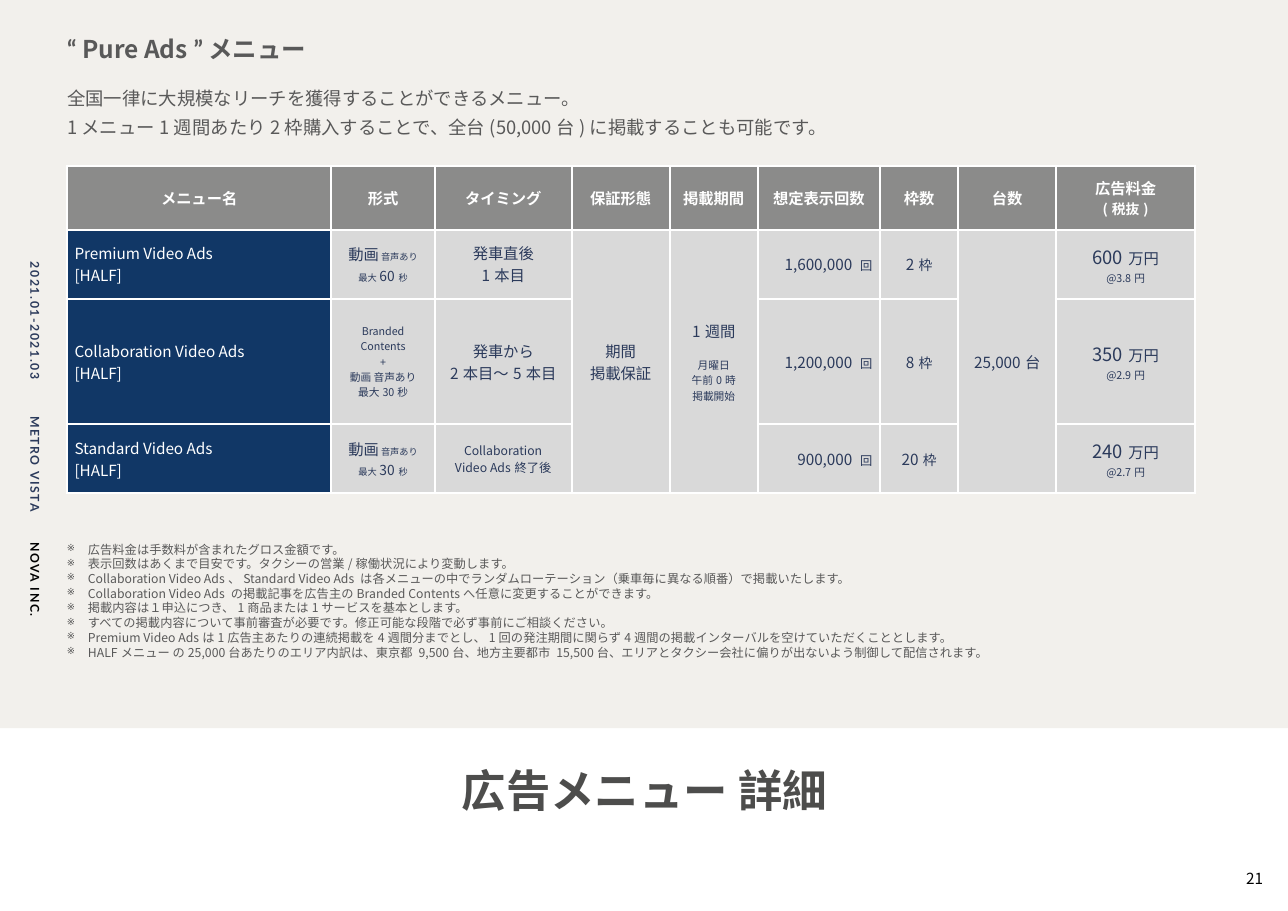
from lxml import etree
from pptx import Presentation
from pptx.dml.color import RGBColor
from pptx.enum.shapes import MSO_SHAPE
from pptx.enum.text import MSO_ANCHOR, PP_ALIGN
from pptx.oxml.ns import qn
from pptx.util import Pt

LEFT, CENTER, RIGHT = PP_ALIGN.LEFT, PP_ALIGN.CENTER, PP_ALIGN.RIGHT
MIDDLE = MSO_ANCHOR.MIDDLE
RECTANGLE = MSO_SHAPE.RECTANGLE

WHITE = RGBColor(0xFF, 0xFF, 0xFF)
BLACK = RGBColor(0, 0, 0)
CREAM = RGBColor(0xF2, 0xF0, 0xEC)
HEADER_GRAY = RGBColor(0x8B, 0x8B, 0x8A)
CELL_GRAY = RGBColor(0xD9, 0xD9, 0xD9)
MENU_BLUE = RGBColor(0x11, 0x37, 0x66)
NAVY = RGBColor(0x2B, 0x3A, 0x5B)
TEXT_GRAY = RGBColor(0x59, 0x59, 0x59)
TITLE_GRAY = RGBColor(0x4D, 0x4D, 0x4C)

JAPANESE_FONT = "Noto Sans CJK JP"
LATIN_FONT = "Lato"
SLIDE_WIDTH, SLIDE_HEIGHT = 841.7, 595.4
LEFT_EDGE = 36.7

COLUMN_WIDTHS = [172.8, 67.7, 89.3, 64.1, 57.6, 79.9, 51.1, 64.1, 90.7]
ROW_HEIGHTS = [41.8, 45.2, 81.8, 45.2]
MENU_COLUMN, PERIOD_COLUMN, VIEWS_COLUMN = 0, 4, 5
MERGED_COLUMNS = [3, 4, 7]

DESCRIPTION = [
    "全国一律に大規模なリーチを獲得することができるメニュー。",
    "1メニュー1週間あたり2枠購入することで、全台(50,000台)に掲載することも可能です。",
]
NOTES = [
    "広告料金は手数料が含まれたグロス金額です。",
    "表示回数はあくまで目安です。タクシーの営業/稼働状況により変動します。",
    "Collaboration Video Ads、Standard Video Ads は各メニューの中でランダムローテーション（乗車毎に異なる順番）で掲載いたします。",
    "Collaboration Video Ads の掲載記事を広告主のBranded Contentsへ任意に変更することができます。",
    "掲載内容は１申込につき、1商品または1サービスを基本とします。",
    "すべての掲載内容について事前審査が必要です。修正可能な段階で必ず事前にご相談ください。",
    "Premium Video Adsは1広告主あたりの連続掲載を4週間分までとし、1回の発注期間に関らず4週間の掲載インターバルを空けていただくこととします。",
    "HALFメニュー の25,000台あたりのエリア内訳は、東京都 9,500台、地方主要都市 15,500台、エリアとタクシー会社に偏りが出ないよう制御して配信されます。",
]
SIDE_LABELS = [
    ("2021.01-2021.03", 200.9, NAVY),
    ("METRO VISTA", 294.5, NAVY),
    ("NOVA INC.", 370.1, BLACK),
]


def lines(size, *texts):
    """Cell paragraphs of one run each, all of the same size."""
    return [[(text, size)] for text in texts]


def video_format(seconds):
    return [[("動画", 10), (" 音声あり", 6)], [("最大", 6), (seconds, 9), ("秒", 6)]]


def views(count):
    return [[(count + " ", 10), ("回", 8)]]


def slots(count):
    return [[(count, 10), ("枠", 9)]]


def price(amount, unit_price):
    return [[(amount, 12), ("万円", 10)], [(f"@{unit_price}円", 7)]]


HEADERS = [lines(10, name) for name in (
    "メニュー名", "形式", "タイミング", "保証形態", "掲載期間", "想定表示回数", "枠数", "台数")]
HEADERS.append(lines(10, "広告料金") + lines(9, "(税抜)"))
MENU_ROWS = [
    [lines(10, "Premium Video Ads", "[HALF]"), video_format("60"),
     lines(10, "発車直後", "1本目"), lines(10, "期間", "掲載保証"),
     lines(10, "1週間") + lines(7, "月曜日", "午前0時", "掲載開始"),
     views("1,600,000"), slots("2"), lines(10, "25,000台"), price("600", "3.8")],
    [lines(10, "Collaboration Video Ads", "[HALF]"),
     lines(7, "Branded Contents", "+", "動画 音声あり", "最大30秒"),
     lines(10, "発車から", "2本目～5本目"), [], [],
     views("1,200,000"), slots("8"), [], price("350", "2.9")],
    [lines(10, "Standard Video Ads", "[HALF]"), video_format("30"),
     lines(8, "Collaboration", "Video Ads終了後"), [], [],
     views("900,000"), slots("20"), [], price("240", "2.7")],
]


def format_run(run, size, color, bold=False, font_name=JAPANESE_FONT):
    run.font.size = Pt(size)
    run.font.bold = bold
    run.font.color.rgb = color
    run.font.name = font_name
    etree.SubElement(run._r.get_or_add_rPr(), qn("a:ea")).set("typeface", font_name)


def add_text(slide, box, texts, size, color, bold=False, align=LEFT,
             line_height=None, font_name=JAPANESE_FONT):
    textbox = slide.shapes.add_textbox(*map(Pt, box))
    frame = textbox.text_frame
    frame.word_wrap = True
    frame.text = "\n".join(texts)
    for paragraph in frame.paragraphs:
        paragraph.alignment = align
        paragraph.line_spacing = Pt(line_height or size * 1.2)
        for run in paragraph.runs:
            format_run(run, size, color, bold, font_name)
    return textbox


def add_heading(slide):
    """Heading whose curly quotes keep their narrow Latin form."""
    heading = add_text(slide, (LEFT_EDGE, 18.7, 300, 26.6), ["“Pure Ads”"], 16,
                       TEXT_GRAY, bold=True)
    paragraph = heading.text_frame.paragraphs[0]
    quoted_name = paragraph.runs[0]
    quoted_name._r.get_or_add_rPr().find(qn("a:ea")).set("typeface", LATIN_FONT)
    menu_word = paragraph.add_run()
    menu_word.text = " メニュー"
    format_run(menu_word, 16, TEXT_GRAY, bold=True)


def add_side_label(slide, text, top, color):
    label = add_text(slide, (-28.8, top, 103, 17.3), [text], 8, color, bold=True,
                     align=CENTER, font_name=LATIN_FONT)
    label.rotation = 90
    run = label.text_frame.paragraphs[0].runs[0]
    run._r.get_or_add_rPr().set("spc", "100")


def add_notes(slide):
    notes = add_text(slide, (LEFT_EDGE, 350.6, 744.5, 94.3), NOTES, 8, TEXT_GRAY)
    for paragraph in notes.text_frame.paragraphs:
        properties = paragraph._p.get_or_add_pPr()
        properties.set("marL", str(Pt(13.7)))
        properties.set("indent", str(-Pt(13.7)))
        etree.SubElement(properties, qn("a:buSzPct")).set("val", "80000")
        etree.SubElement(properties, qn("a:buChar")).set("char", "※")


def set_white_borders(cell):
    properties = cell._tc.get_or_add_tcPr()
    for side in ("lnL", "lnR", "lnT", "lnB"):
        border = etree.SubElement(properties, qn(f"a:{side}"), w=str(Pt(1.5)))
        fill = etree.SubElement(border, qn("a:solidFill"))
        etree.SubElement(fill, qn("a:srgbClr")).set("val", str(WHITE))


def fill_cell(cell, content, fill, color, align, bold):
    set_white_borders(cell)
    cell.fill.solid()
    cell.fill.fore_color.rgb = fill
    cell.vertical_anchor = MIDDLE
    cell.margin_left = cell.margin_right = Pt(5)
    cell.margin_top = cell.margin_bottom = Pt(2.9)
    frame = cell.text_frame
    for index, pieces in enumerate(content):
        paragraph = frame.add_paragraph() if index else frame.paragraphs[0]
        paragraph.alignment = align
        for text, size in pieces:
            run = paragraph.add_run()
            run.text = text
            format_run(run, size, color, bold)


def add_menu_table(slide):
    rows = [HEADERS] + MENU_ROWS
    table = slide.shapes.add_table(
        len(rows), len(HEADERS), Pt(43.7), Pt(108.4),
        Pt(sum(COLUMN_WIDTHS)), Pt(sum(ROW_HEIGHTS))).table
    table.horz_banding = False
    for column, width in zip(table.columns, COLUMN_WIDTHS):
        column.width = Pt(width)
    for row, height in zip(table.rows, ROW_HEIGHTS):
        row.height = Pt(height)
    for row_index, row in enumerate(rows):
        for column_index, content in enumerate(row):
            fill, color, align = CELL_GRAY, NAVY, CENTER
            if row_index == 0:
                fill, color = HEADER_GRAY, WHITE
            elif column_index == MENU_COLUMN:
                fill, color, align = MENU_BLUE, WHITE, LEFT
            elif column_index == VIEWS_COLUMN:
                align = RIGHT
            fill_cell(table.cell(row_index, column_index), content,
                      fill, color, align, bold=row_index == 0)
    for column_index in MERGED_COLUMNS:
        table.cell(1, column_index).merge(table.cell(len(MENU_ROWS), column_index))
    start_day = table.cell(1, PERIOD_COLUMN).text_frame.paragraphs[1]
    start_day.space_before = Pt(10)


def add_background_band(slide):
    band = slide.shapes.add_shape(RECTANGLE, 0, 0, Pt(SLIDE_WIDTH), Pt(475.9))
    band.shadow.inherit = False
    band.fill.solid()
    band.fill.fore_color.rgb = CREAM
    band.line.fill.background()


def set_title(slide, text):
    title = slide.shapes.title
    title.left, title.top, title.width, title.height = map(Pt, (61.2, 498, 720, 36.7))
    frame = title.text_frame
    frame.margin_top = frame.margin_bottom = 0
    frame.vertical_anchor = MIDDLE
    frame.text = text
    frame.paragraphs[0].alignment = CENTER
    format_run(frame.paragraphs[0].runs[0], 29, TITLE_GRAY, bold=True)


def main():
    presentation = Presentation()
    presentation.slide_width, presentation.slide_height = Pt(SLIDE_WIDTH), Pt(SLIDE_HEIGHT)
    slide = presentation.slides.add_slide(presentation.slide_layouts[5])
    set_title(slide, "広告メニュー 詳細")
    add_background_band(slide)
    for text, top, color in SIDE_LABELS:
        add_side_label(slide, text, top, color)
    add_heading(slide)
    add_text(slide, (LEFT_EDGE, 49, 718.6, 43.9), DESCRIPTION, 12, TEXT_GRAY, line_height=19)
    add_menu_table(slide)
    add_notes(slide)
    add_text(slide, (643, 564.5, 189.4, 30), ["21"], 10, BLACK, align=RIGHT)
    presentation.save("out.pptx")


if __name__ == "__main__":
    main()
